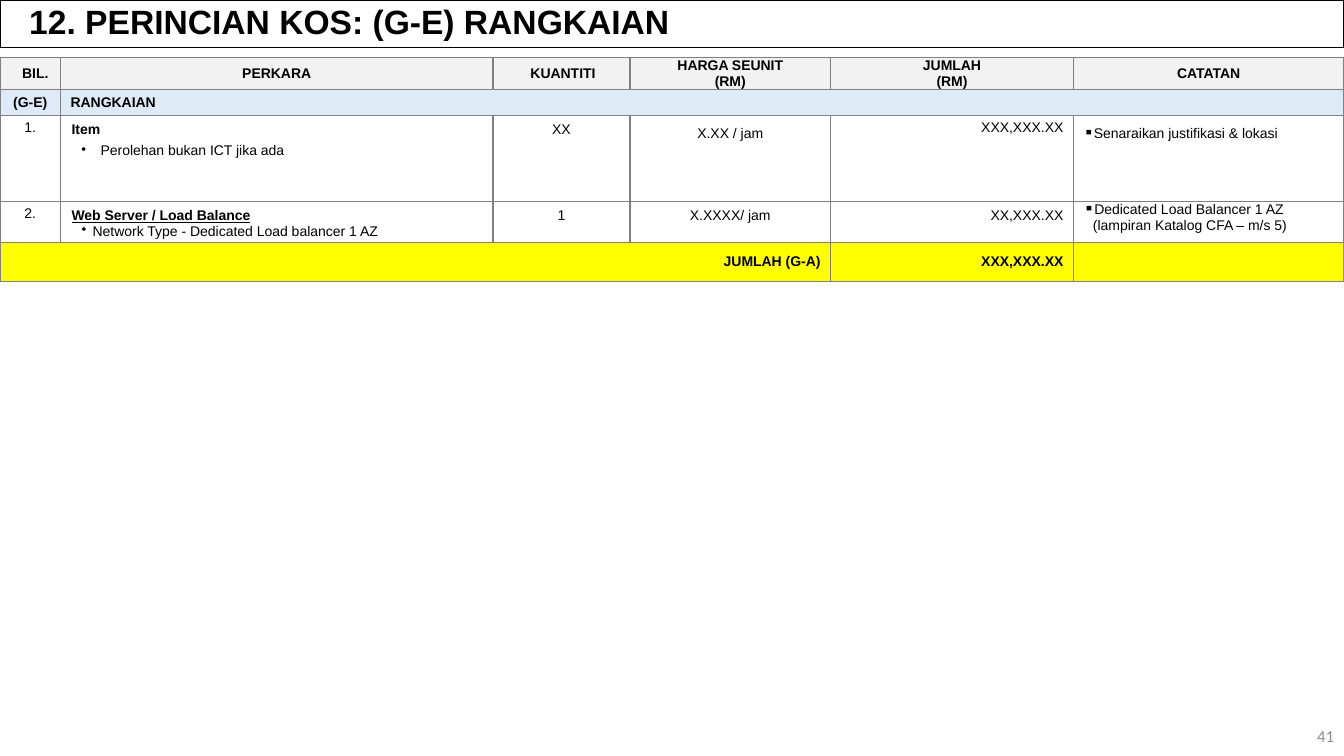
import copy

import lxml.etree
import pptx
import pptx.dml.color
import pptx.enum.text
import pptx.oxml.ns
import pptx.util

Pt = pptx.util.Pt
ALIGN = pptx.enum.text.PP_ALIGN
ANCHOR = pptx.enum.text.MSO_ANCHOR
qn = pptx.oxml.ns.qn

# Content: each cell is a list of (text, format) lines
TITLE = "12. PERINCIAN KOS: (G-E) RANGKAIAN"
PAGE_NUMBER = "41"
CENTER, RIGHT = {"align": ALIGN.CENTER}, {"align": ALIGN.RIGHT}
BOLD, TALL = {"bold": True}, {"spacing": Pt(15.1)}
HEADING = {**CENTER, **BOLD}

ROWS = [
    [
        [("BIL.", {**HEADING, "left": 7.2})],
        [("PERKARA", HEADING)],
        [("KUANTITI", {**HEADING, "left": 2.2})],
        [("HARGA SEUNIT", HEADING), ("(RM)", HEADING)],
        [("JUMLAH", HEADING), ("(RM)", HEADING)],
        [("CATATAN", HEADING)],
    ],
    [[("(G-E)", HEADING)], [("RANGKAIAN", BOLD)], [], [], [], []],
    [
        [("1.", CENTER)],
        [
            ("Item", {**BOLD, **TALL, "left": 7.2}),
            ("Perolehan bukan ICT jika ada",
             {**TALL, "left": 28, "hanging": 13.7, "bullet": "•"}),
        ],
        [("XX", {**CENTER, **TALL})],
        [("X.XX / jam", {**CENTER, **TALL})],
        [("XXX,XXX.XX", RIGHT)],
        [("Senaraikan justifikasi & lokasi",
          {**TALL, "left": 7.2, "hanging": 7.2, "bullet": "▪"})],
    ],
    [
        [("2.", CENTER)],
        [
            ("Web Server / Load Balance",
             {**BOLD, **TALL, "left": 7.2, "underline": True}),
            ("Network Type - Dedicated Load balancer 1 AZ",
             {"left": 22.3, "hanging": 7.9, "bullet": "•"}),
        ],
        [("1", {**CENTER, **TALL})],
        [("X.XXXX/ jam", {**CENTER, **TALL})],
        [("XX,XXX.XX", {**RIGHT, **TALL})],
        [("Dedicated Load Balancer 1 AZ\n(lampiran Katalog CFA – m/s 5)",
          {"left": 13.3, "hanging": 6.5, "bullet": "▪"})],
    ],
    [
        [("JUMLAH (G-A)", {**RIGHT, **BOLD})], [], [], [],
        [("XXX,XXX.XX", {**RIGHT, **BOLD})], [],
    ],
]
COLUMN_WIDTHS = [43.2, 308.9, 97.9, 143.3, 173.5, 193.2]
ROW_HEIGHTS = [23.2, 18.2, 61.4, 29.3, 27.9]
ROW_FILLS = ["F2F2F2", "DEEBF7", None, None, "FFFF00"]
MIDDLE_ROWS = {0, 1, 4}
MERGES = [(1, 1, 4), (4, 0, 3)]  # row, first column, last column

# Cell margins: left, top, right, bottom
NORMAL, TIGHT = (7.2, 3.6, 7.2, 3.6), (0.7, 0.7, 0.7, 0)
ROW_MARGINS = [(0, 0, 0, 0), (7.2, 3, 7.2, 3), NORMAL, TIGHT, NORMAL]
CELL_MARGINS = {(1, 0): (0, 3, 0, 3), (2, 1): TIGHT, (2, 2): TIGHT,
                (3, 0): NORMAL, (3, 4): (0.7, 0.7, 7.2, 0)}
OPEN_SIDES = {(1, 1): "R", (1, 4): "R", (1, 5): "L"}


def color(value):
    return pptx.dml.color.RGBColor.from_string(value)


def write(paragraph, text, size=10, font="Arial", fill="000000", bold=False,
          underline=False, align=ALIGN.LEFT, spacing=1.0, left=0, hanging=0,
          bullet=None):
    paragraph.text = text
    paragraph.alignment = align
    paragraph.line_spacing = spacing
    paragraph.space_before = Pt(0)
    for run in paragraph.runs:
        run.font.size = Pt(size)
        run.font.name = font
        run.font.bold = bold
        run.font.underline = underline
        run.font.color.rgb = color(fill)
    for line_break in paragraph._p.findall(qn("a:br")):
        line_break.append(copy.deepcopy(paragraph.runs[0]._r.rPr))
    properties = paragraph._p.get_or_add_pPr()
    properties.set("marL", str(Pt(left)))
    properties.set("indent", str(-Pt(hanging)))
    if bullet:
        lxml.etree.SubElement(properties, qn("a:buChar")).set("char", bullet)
    if not text:
        end = lxml.etree.SubElement(paragraph._p, qn("a:endParaRPr"))
        end.set("sz", str(size * 100))


def draw_borders(cell, open_sides):
    properties = cell._tc.get_or_add_tcPr()
    for side in "LRTB":
        line = lxml.etree.SubElement(properties, qn("a:ln" + side))
        line.set("w", str(Pt(1)))
        if side in open_sides:
            lxml.etree.SubElement(line, qn("a:noFill"))
        else:
            solid = lxml.etree.SubElement(line, qn("a:solidFill"))
            lxml.etree.SubElement(solid, qn("a:srgbClr")).set("val", "808080")


def fill_cell(cell, row, column, lines):
    draw_borders(cell, OPEN_SIDES.get((row, column), ""))
    if ROW_FILLS[row]:
        cell.fill.solid()
        cell.fill.fore_color.rgb = color(ROW_FILLS[row])
    else:
        cell.fill.background()
    margins = CELL_MARGINS.get((row, column), ROW_MARGINS[row])
    (cell.margin_left, cell.margin_top,
     cell.margin_right, cell.margin_bottom) = map(Pt, margins)
    cell.vertical_anchor = ANCHOR.MIDDLE if row in MIDDLE_ROWS else ANCHOR.TOP
    frame = cell.text_frame
    for index, (text, style) in enumerate(lines or [("", {})]):
        paragraph = frame.add_paragraph() if index else frame.paragraphs[0]
        write(paragraph, text, **style)


presentation = pptx.Presentation()
presentation.slide_width, presentation.slide_height = Pt(960), Pt(540)
slide = presentation.slides.add_slide(presentation.slide_layouts[5])

# Title
title = slide.shapes.title
title.left, title.top, title.width, title.height = map(Pt, (0, 0, 960, 33.8))
title.line.color.rgb = color("000000")
title.line.width = Pt(0.75)
title.text_frame.auto_size = pptx.enum.text.MSO_AUTO_SIZE.NONE
title.text_frame.vertical_anchor = ANCHOR.MIDDLE
write(title.text_frame.paragraphs[0], TITLE, size=24, bold=True,
      spacing=0.9, left=13.7)

# Cost table
frame = slide.shapes.add_table(len(ROWS), len(COLUMN_WIDTHS), Pt(0), Pt(41),
                               Pt(960), Pt(sum(ROW_HEIGHTS)))
table = frame.table
table.first_row = table.horz_banding = False
for column, width in enumerate(COLUMN_WIDTHS):
    table.columns[column].width = Pt(width)
for row, cells in enumerate(ROWS):
    table.rows[row].height = Pt(ROW_HEIGHTS[row])
    for column, lines in enumerate(cells):
        fill_cell(table.cell(row, column), row, column, lines)
for row, first, last in MERGES:
    table.cell(row, first).merge(table.cell(row, last))

# Page number
number = slide.shapes.add_textbox(Pt(744), Pt(511.2), Pt(216), Pt(28.8))
number.text_frame.word_wrap = True
number.text_frame.vertical_anchor = ANCHOR.MIDDLE
write(number.text_frame.paragraphs[0], PAGE_NUMBER, size=12, font="Calibri",
      fill="8C8C8C", align=ALIGN.RIGHT)

presentation.save("out.pptx")
